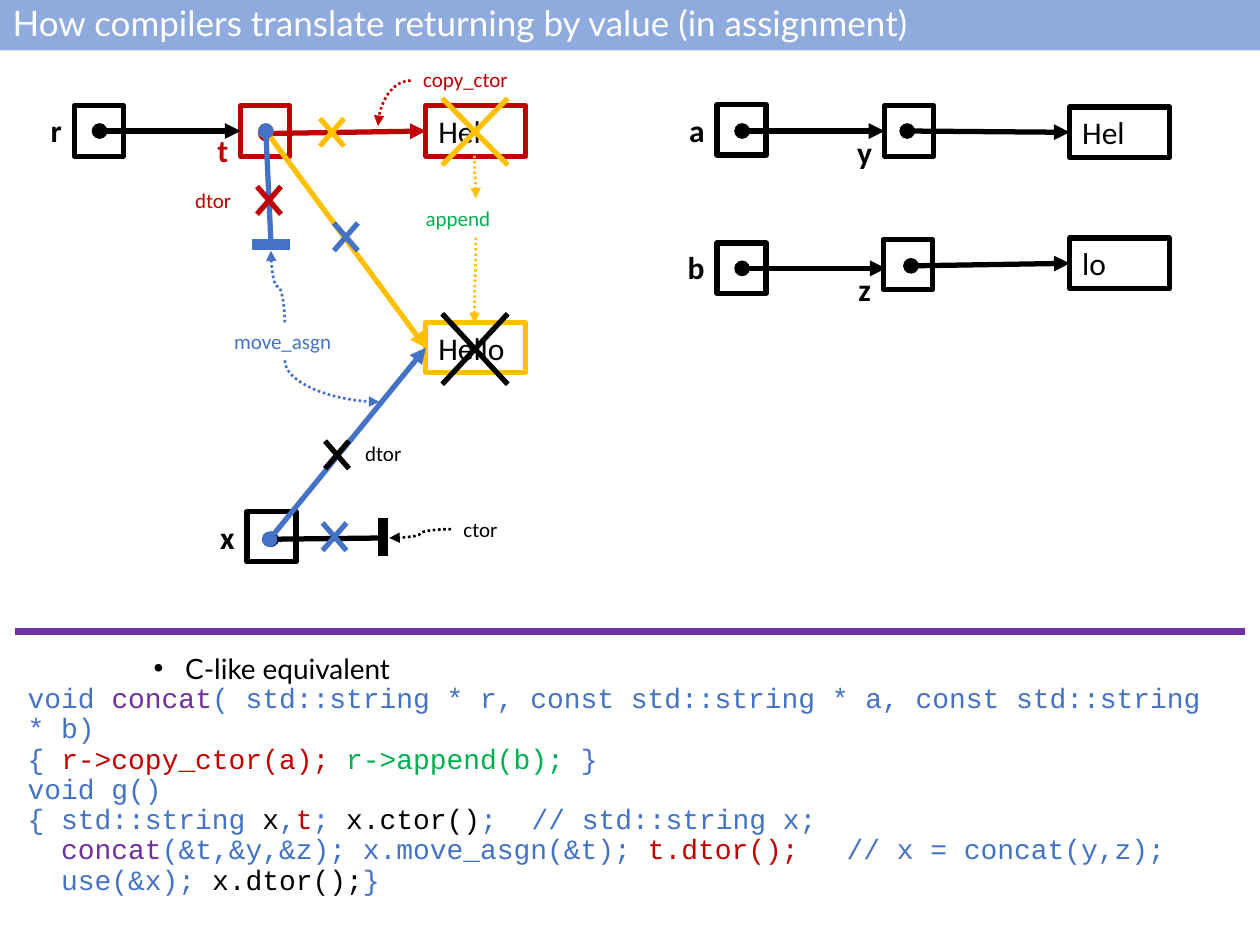
from dataclasses import dataclass

from pptx import Presentation
from pptx import util as u
from pptx.dml.color import RGBColor
from pptx.enum import dml, shapes, text
from pptx.oxml.ns import qn
from lxml import etree

COLORS = {
    "black": "000000", "white": "FFFFFF", "red": "C00000", "green": "00B050",
    "blue": "4472C4", "yellow": "FFC000", "purple": "7030A0", "band": "8FAADC",
}
CELL, VALUE_W, BOX_H = 0.39, 0.79, 0.4


@dataclass
class Cell:
    name: str
    x: float
    y: float
    label_y: float
    color: str = "black"


@dataclass
class Value:
    name: str
    text: str
    x: float
    y: float
    color: str = "black"


@dataclass
class Arrow:
    start: tuple
    end: tuple
    color: str = "black"
    target: str = ""
    head: str = "oval"
    tail: str = "triangle"
    width: float = 3


@dataclass
class Curve:
    x: float
    y: float
    w: float
    h: float
    rot: int
    flip: str
    kind: str
    color: str


@dataclass
class Cross:
    x: float
    y: float
    color: str
    w: float = 0.19
    h: float = 0.22


@dataclass
class Note:
    text: str
    x: float
    y: float
    w: float
    color: str


CELLS = [
    Cell("r", 0.59, 0.84, 0.83), Cell("t", 1.91, 0.84, 0.99, "red"),
    Cell("x", 1.96, 4.06, 4.06), Cell("a", 5.69, 0.83, 0.83),
    Cell("b", 5.69, 1.93, 1.92), Cell("y", 7.02, 0.84, 1.01),
    Cell("z", 7.01, 1.9, 2.09),
]
VALUES = [
    Value("y text", "Hel", 8.49, 0.85), Value("z text", "lo", 8.49, 1.89),
    Value("copied", "Hel", 3.38, 0.84, "red"),
    Value("appended", "Hello", 3.38, 2.56, "yellow"),
]
ARROWS = [
    Arrow((0.12, 5.01), (9.88, 5.01), "purple", head="", tail="", width=4),
    Arrow((7.2, 1.04), (8.49, 1.05), target="y text"),
    Arrow((7.23, 2.11), (8.49, 2.09), target="z text"),
    Arrow((2.11, 1.06), (3.38, 1.04), "red", "copied"),
    Arrow((2.15, 4.28), (3.04, 4.27), tail=""),
    Arrow((3.04, 4.41), (3.04, 4.11), head="", tail="", width=6),
    Arrow((2.11, 1.04), (3.38, 2.77), "yellow", "appended"),
    Arrow((0.79, 1.04), (1.93, 1.04), target="t"),
    Arrow((5.89, 1.04), (7.03, 1.04), target="y"),
    Arrow((5.89, 2.13), (7.03, 2.13)),
    Arrow((2.14, 4.28), (3.38, 2.77), "blue", "appended"),
    Arrow((2.11, 1.04), (2.15, 1.92), "blue", tail=""),
    Arrow((2, 1.94), (2.3, 1.94), "blue", head="", tail="", width=6),
]
CURVES = [
    Curve(3, 0.64, 0.26, 0.36, 180, "V", "curvedConnector2", "red"),
    Curve(3.09, 4.2, 0.49, 0.07, 180, "V", "curvedConnector3", "black"),
    Curve(3.6, 1.4, 0.34, 0.01, 270, "H", "curvedConnector3", "yellow"),
    Curve(3.43, 2.22, 0.68, 0.01, 90, "", "curvedConnector3", "yellow"),
    Curve(1.92, 2.22, 0.57, 0.11, 270, "V", "curvedConnector3", "blue"),
    Curve(2.47, 2.65, 0.33, 0.75, 270, "H", "curvedConnector2", "blue"),
]
CROSSES = [
    Cross(2.56, 4.15, "blue"), Cross(2.54, 0.94, "yellow"),
    Cross(2.65, 1.77, "blue"), Cross(2.58, 3.5, "black"),
    Cross(2.04, 1.48, "red"), Cross(3.51, 0.78, "yellow", 0.52, 0.53),
    Cross(3.51, 2.49, "black", 0.52, 0.56),
]
NOTES = [
    Note("copy_ctor", 3.26, 0.48, 0.99, "red"), Note("append", 3.28, 1.58, 0.99, "green"),
    Note("ctor", 3.58, 4.05, 0.71, "black"), Note("move_asgn", 1.76, 2.56, 1, "blue"),
    Note("dtor", 2.8, 3.45, 0.57, "black"), Note("dtor", 1.45, 1.44, 0.57, "red"),
]
CODE = [
    [("void ", "blue"), ("concat", "purple"),
     ("( std::string * r, const std::string * a, const std::string * b)", "blue")],
    [("{ ", "blue"), ("r->copy_ctor(a); ", "red"), ("r->append(b); ", "green"), ("}", "blue")],
    [("void g()", "blue")],
    [("{ std::string ", "blue"), ("x", "black"), (",", "blue"), ("t", "red"), ("; ", "blue"),
     ("x.ctor()", "black"), (";\t// std::string x;", "blue")],
    [("  concat", "purple"), ("(&t,&y,&z); x.move_asgn(&t); ", "blue"),
     ("t.dtor();\t", "red"), ("// x = concat(y,z);", "blue")],
    [("  use(&x); ", "blue"), ("x.dtor();", "black"), ("}", "blue")],
]


def rgb(color: str) -> RGBColor:
    return RGBColor.from_string(COLORS[color])


def add_run(p, words: str, size: float, color: str, font="Calibri", bold=False) -> None:
    r = p.add_run()
    r.text = words
    r.font.size, r.font.name, r.font.bold = u.Pt(size), font, bold
    r.font.color.rgb = rgb(color)


def place(sp, x: float, y: float, w: float, h: float) -> None:
    sp.left, sp.top, sp.width, sp.height = map(u.Inches, (x, y, w, h))


def add_box(s, x: float, y: float, w: float, color: str):
    sp = s.shapes.add_shape(shapes.MSO_SHAPE.RECTANGLE, *map(u.Inches, (x, y, w, BOX_H)))
    sp.shadow.inherit = False
    sp.fill.background()
    sp.line.color.rgb = rgb(color)
    sp.line.width = u.Pt(3)
    return sp


def add_label(s, words: str, x: float, y: float, w: float, h: float, size: float,
              color: str, bold=False, align=text.PP_ALIGN.LEFT) -> None:
    tf = s.shapes.add_textbox(*map(u.Inches, (x, y, w, h))).text_frame
    tf.word_wrap = True
    tf.paragraphs[0].alignment = align
    add_run(tf.paragraphs[0], words, size, color, bold=bold)


def add_line(tree, start: tuple, end: tuple, color: str, width: float,
             head="", tail="", kind=shapes.MSO_CONNECTOR.STRAIGHT, dotted=False):
    cx = tree.add_connector(kind, *map(u.Inches, start + end))
    cx.line.color.rgb = rgb(color)
    cx.line.width = u.Pt(width)
    if dotted:
        cx.line.dash_style = dml.MSO_LINE.ROUND_DOT
    sp_pr = cx._element.spPr
    for tag, mark in (("a:headEnd", head), ("a:tailEnd", tail)):
        if mark:
            etree.SubElement(sp_pr.find(qn("a:ln")), qn(tag), type=mark)
    etree.SubElement(sp_pr, qn("a:effectLst"))
    return cx


def add_curve(s, c: Curve) -> None:
    cx = add_line(s.shapes, (c.x, c.y), (c.x + c.w, c.y + c.h), c.color, 1.5,
                  tail="triangle", kind=shapes.MSO_CONNECTOR.CURVE, dotted=True)
    sp_pr = cx._element.spPr
    sp_pr.find(qn("a:prstGeom")).set("prst", c.kind)
    xfrm = sp_pr.find(qn("a:xfrm"))
    xfrm.set("rot", str(c.rot * 60000))
    if c.flip:
        xfrm.set("flip" + c.flip, "1")


def add_cross(s, c: Cross) -> None:
    tree = s.shapes.add_group_shape().shapes
    right, bottom = c.x + c.w, c.y + c.h
    add_line(tree, (right, c.y), (c.x, bottom), c.color, 3)
    add_line(tree, (c.x, c.y), (right, bottom), c.color, 3)


def format_paragraph(p, level: int, spacing: float, left: float, hanging: float, bullet="") -> None:
    p.level, p.line_spacing, p.space_before = level, spacing, u.Pt(0)
    p_pr = p._p.get_or_add_pPr()
    p_pr.set("marL", str(u.Inches(left)))
    p_pr.set("indent", str(u.Inches(-hanging)))
    if bullet:
        etree.SubElement(p_pr, qn("a:buChar"), char=bullet)
    else:
        etree.SubElement(p_pr, qn("a:buNone"))
        tabs = etree.SubElement(p_pr, qn("a:tabLst"))
        etree.SubElement(tabs, qn("a:tab"), pos=str(u.Inches(6.3)), algn="l")


def fill_placeholders(s) -> None:
    title, body = s.shapes.title, s.placeholders[1]
    place(title, 0, 0, 10, 0.4)
    title.fill.solid()
    title.fill.fore_color.rgb = rgb("band")
    tf = title.text_frame
    tf.auto_size, tf.vertical_anchor = text.MSO_AUTO_SIZE.NONE, text.MSO_ANCHOR.MIDDLE
    p = tf.paragraphs[0]
    p.alignment, p.line_spacing = text.PP_ALIGN.LEFT, 0.9
    add_run(p, "How compilers translate returning by value (in assignment)", 20, "white", "Lato")

    place(body, 0.12, 5.17, 9.76, 1.89)
    tf = body.text_frame
    tf.auto_size, tf.vertical_anchor = text.MSO_AUTO_SIZE.NONE, text.MSO_ANCHOR.TOP
    p = tf.paragraphs[0]
    format_paragraph(p, 2, 0.8, 1.25, 0.25, "•")
    add_run(p, "C-like equivalent", 16, "black", "Lato")
    for line in CODE:
        p = tf.add_paragraph()
        format_paragraph(p, 4, 0.9, 0, 0)
        for words, color in line:
            add_run(p, words, 16, color, "Courier New")


def main() -> None:
    prs = Presentation()
    prs.slide_width, prs.slide_height = u.Inches(10), u.Inches(7.5)
    s = prs.slides.add_slide(prs.slide_layouts[1])
    fill_placeholders(s)
    boxes = {}
    for c in CELLS:
        boxes[c.name] = add_box(s, c.x, c.y, CELL, c.color)
        add_label(s, c.name, c.x - 0.47, c.label_y, 0.47, BOX_H, 18, c.color, True, text.PP_ALIGN.RIGHT)
    for v in VALUES:
        sp = boxes[v.name] = add_box(s, v.x, v.y, VALUE_W, v.color)
        p = sp.text_frame.paragraphs[0]
        p.alignment = text.PP_ALIGN.LEFT
        add_run(p, v.text, 18, "black")
    for a in ARROWS:
        cx = add_line(s.shapes, a.start, a.end, a.color, a.width, a.head, a.tail)
        if a.target:
            cx.end_connect(boxes[a.target], 1)
    for c in CURVES:
        add_curve(s, c)
    for c in CROSSES:
        add_cross(s, c)
    for n in NOTES:
        add_label(s, n.text, n.x, n.y, n.w, 0.3, 12, n.color)
    prs.save("out.pptx")


if __name__ == "__main__":
    main()
